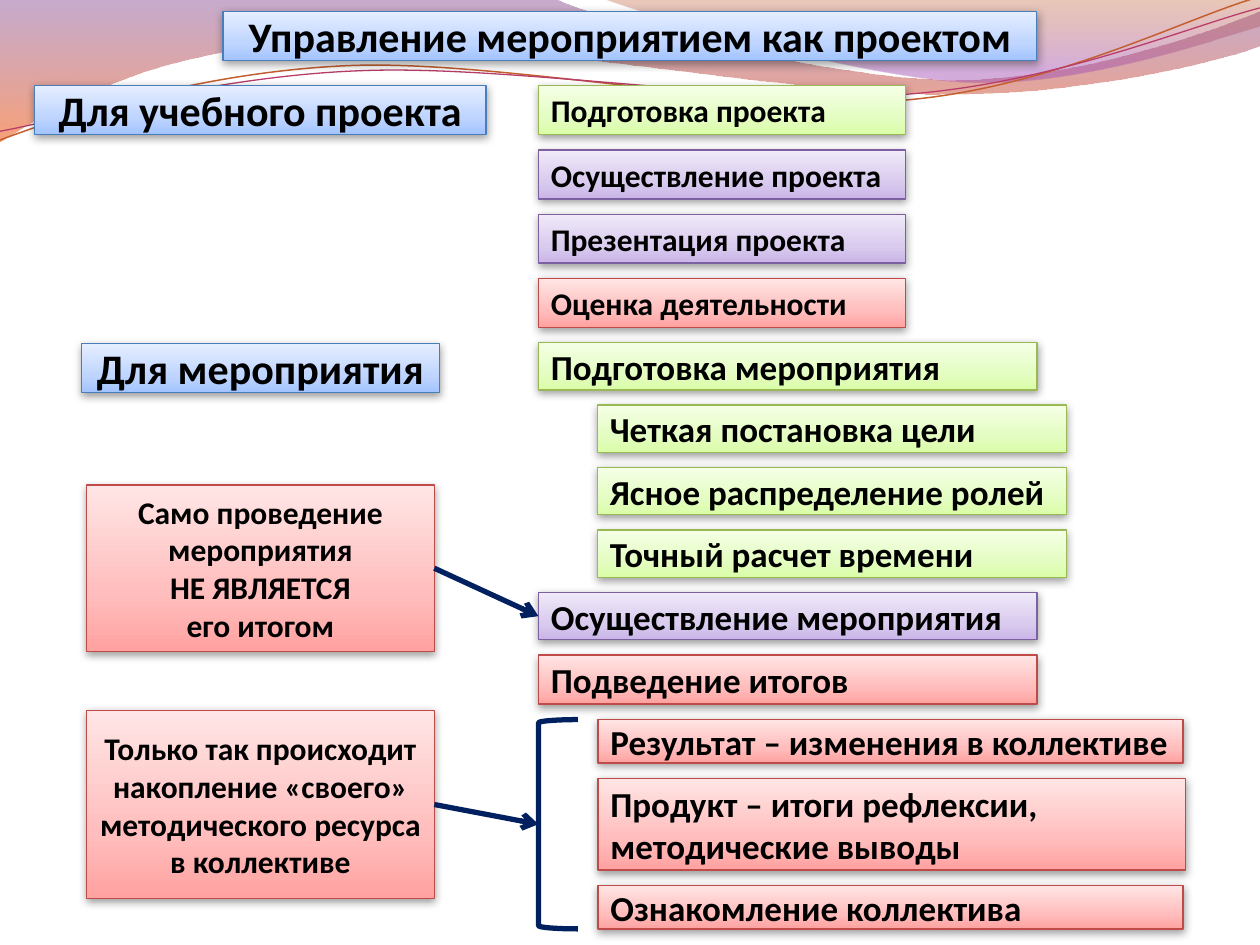
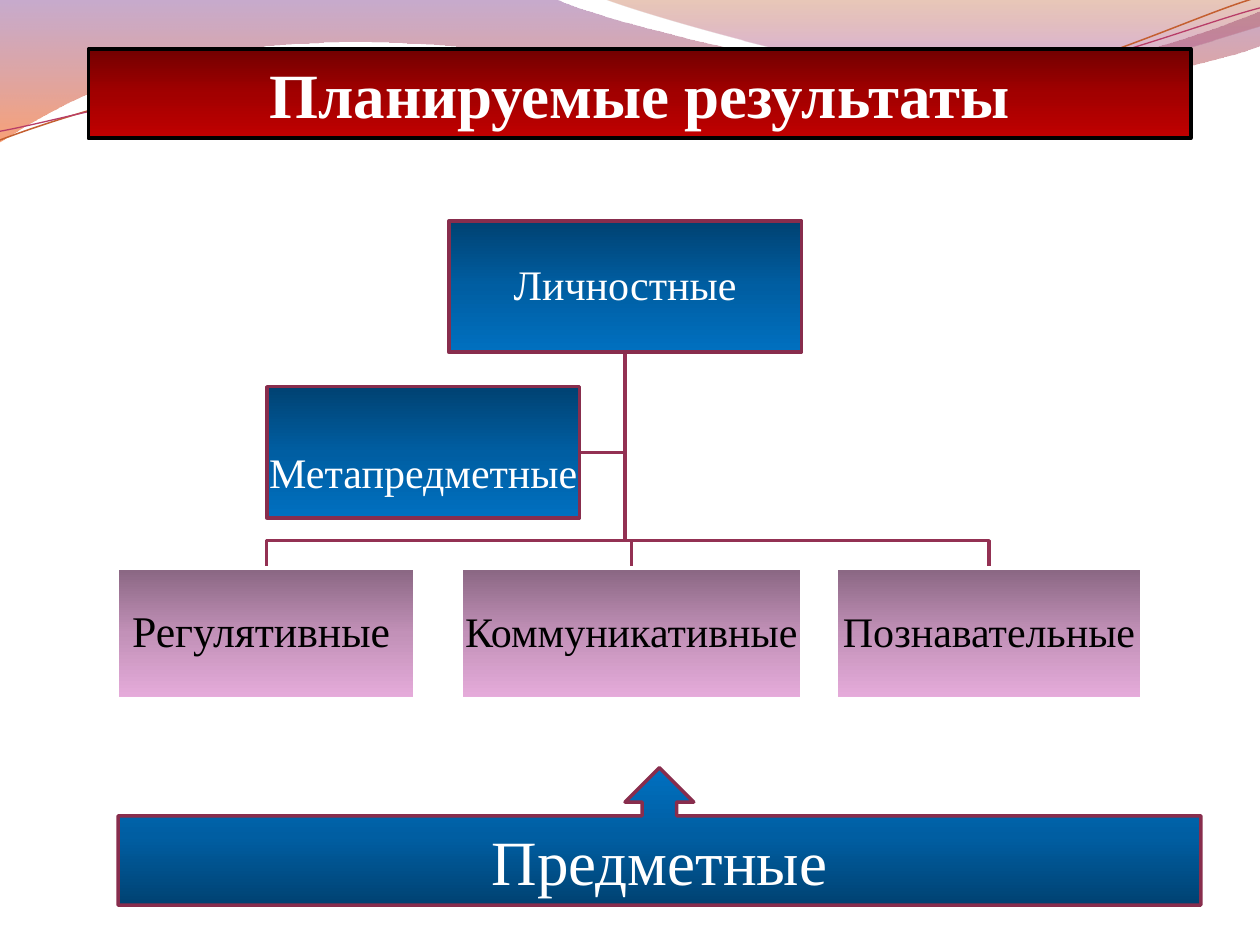
from dataclasses import dataclass
from typing import NamedTuple, Optional

from lxml.etree import SubElement
from pptx import Presentation
from pptx.dml.color import RGBColor
from pptx.enum.shapes import MSO_CONNECTOR, MSO_SHAPE
from pptx.enum.text import MSO_ANCHOR, PP_ALIGN
from pptx.oxml.ns import qn
from pptx.util import Pt


class Stop(NamedTuple):
    position: int
    color: str
    opacity: int = 100


class Paint(NamedTuple):
    stops: tuple[Stop, ...]
    angle: int  # clockwise degrees; 90 runs downwards
    line: Optional[str] = None
    line_width: float = 0.75
    shadow: bool = False


class Box(NamedTuple):
    left: float
    top: float
    width: float
    height: float

    @property
    def center(self) -> float:
        return self.left + self.width / 2

    @property
    def bottom(self) -> float:
        return self.top + self.height


def soft(dark: str, middle: str, light: str, line: str) -> Paint:
    return Paint((Stop(0, dark), Stop(35, middle), Stop(100, light)), 270, line, shadow=True)


def deep(dark: str, middle: str, light: str, line: str, angle: int = 90) -> Paint:
    return Paint((Stop(0, dark), Stop(50, middle), Stop(100, light)), angle, line, 2)


NAVY_STEPS = ("004272", "005EA2", "0070C0", "882D4D")


@dataclass(frozen=True)
class Theme:
    sans: str = "Calibri"
    serif: str = "Times New Roman"
    dark: str = "000000"
    light: str = "FFFFFF"
    arrow: str = "002060"
    branch: str = "933153"
    size_banner: float = 36
    size_heading: float = 24
    size_item: float = 20
    size_note: float = 18
    blue: Paint = soft("A3C4FF", "BFD5FF", "E5EEFF", "4A7EBB")
    green: Paint = soft("DAFDA7", "E4FDC2", "F5FFE6", "98B954")
    purple: Paint = soft("C9B5E8", "D9CBEE", "F0EAF9", "7D60A0")
    red: Paint = soft("FFA2A1", "FFBEBD", "FFE5E5", "BE4B48")
    crimson: Paint = deep("720000", "A20000", "C00000", "000000")
    navy: Paint = deep(*NAVY_STEPS)
    navy_up: Paint = deep(*NAVY_STEPS, angle=270)
    mauve: Paint = deep("896682", "C291B8", "E6ACDB", "FFFFFF")


THEME = Theme()


# Wave segments: two numbers are a straight line's end, six a cubic curve
class Wave(NamedTuple):
    start: tuple[float, float]
    segments: tuple[tuple[float, ...], ...]
    paint: Paint


WAVES = (
    Wave((0, 0),
         ((317, -0.7), (343, 12, 478, 45.5, 546, 45.5), (614.5, 45.5, 690, 18.5, 720, 6.5),
          (720.7, 26), (708, 31.5, 626.5, 54.5, 537, 54), (448, 54, 275, 20, 185, 24.5),
          (93, 26, 33, 60, -0.7, 81.5)),
         Paint((Stop(0, "834591", 45), Stop(100, "F35307", 55)), 90)),
    Wave((345, -0.7),
         ((366.5, 8, 491, 44.5, 553.5, 47), (616.5, 49.5, 692, 23, 720, 15), (720, 0)),
         Paint((Stop(0, "B74915", 30), Stop(80, "A14BB4", 45)), 90)),
    Wave((0, 80),
         ((34.5, 67, 114, 41, 199.5, 37.5), (284.5, 34, 427, 64, 513.5, 57.5),
          (600, 51, 675.5, 11, 718.5, -1.5)),
         Paint((), 0, "C45F30", 0.85)),
    Wave((0, 75),
         ((34, 69, 118, 44, 204, 40.5), (290, 36.5, 430, 60.5, 516, 54),
          (602, 48, 679.5, 15, 720, 4.5)),
         Paint((), 0, "B83D68", 0.75)),
)


# Drawing helpers
def apply_paint(shape, paint: Paint) -> None:
    properties = shape.element.spPr
    if paint.stops:
        shape.fill.gradient()
        shape.fill.gradient_angle = 360 - paint.angle
        stop_list = properties.find(qn("a:gradFill")).find(qn("a:gsLst"))
        stop_list.clear()
        for stop in paint.stops:
            entry = SubElement(stop_list, qn("a:gs"), pos=str(stop.position * 1000))
            color = SubElement(entry, qn("a:srgbClr"), val=stop.color)
            if stop.opacity < 100:
                SubElement(color, qn("a:alpha"), val=str(stop.opacity * 1000))
    else:
        shape.fill.background()
    if paint.line:
        shape.line.color.rgb = RGBColor.from_string(paint.line)
        shape.line.width = Pt(paint.line_width)
    else:
        shape.line.fill.background()
    shape.shadow.inherit = False
    if paint.shadow:
        shadow = SubElement(properties.find(qn("a:effectLst")), qn("a:outerShdw"),
                            blurRad=str(Pt(5)), dist=str(Pt(1.6)), dir="5400000",
                            rotWithShape="0")
        black = SubElement(shadow, qn("a:srgbClr"), val=THEME.dark)
        SubElement(black, qn("a:alpha"), val="38000")


def write(shape, text: str, *, size: float, font: str = THEME.sans, color: str = THEME.dark,
          bold: bool = False, align=PP_ALIGN.CENTER, anchor=MSO_ANCHOR.MIDDLE,
          wrap: bool = True, spacing: float = 1.0,
          margins: tuple[float, float, float, float] = (7.2, 3.6, 7.2, 3.6)) -> None:
    frame = shape.text_frame
    frame.word_wrap = wrap
    frame.vertical_anchor = anchor
    frame.margin_left, frame.margin_top, frame.margin_right, frame.margin_bottom = map(Pt, margins)
    paragraph = frame.paragraphs[0]
    paragraph.alignment = align
    paragraph.line_spacing = spacing
    for index, line in enumerate(text.split("\n")):
        if index:
            paragraph.add_line_break()
        run = paragraph.add_run()
        run.text = line
        run.font.size = Pt(size)
        run.font.name = font
        run.font.bold = bold
        run.font.color.rgb = RGBColor.from_string(color)


def draw_shape(slide, box: Box, paint: Paint, kind=MSO_SHAPE.RECTANGLE):
    shape = slide.shapes.add_shape(kind, *map(Pt, box))
    apply_paint(shape, paint)
    return shape


def draw_outline(slide, points: list[tuple[float, float]], paint: Paint):
    (start_x, start_y), *rest = points
    builder = slide.shapes.build_freeform(Pt(start_x), Pt(start_y), scale=1.0)
    builder.add_line_segments([(Pt(x), Pt(y)) for x, y in rest], close=bool(paint.stops))
    outline = builder.convert_to_shape()
    apply_paint(outline, paint)
    return outline


def draw_wave(slide, wave: Wave) -> None:
    points = [wave.start]
    for segment in wave.segments:
        points += zip(segment[::2], segment[1::2])
    outline = draw_outline(slide, points, wave.paint)

    # Join each curve's three points into one cubic segment
    steps = iter(list(outline.element.spPr.iter(qn("a:lnTo"))))
    for segment in wave.segments:
        first = next(steps)
        if len(segment) == 6:
            curve = first.makeelement(qn("a:cubicBezTo"))
            first.addprevious(curve)
            for step in (first, next(steps), next(steps)):
                curve.append(step[0])
                step.getparent().remove(step)


def draw_arrow(slide, source, target) -> None:
    arrow = slide.shapes.add_connector(MSO_CONNECTOR.STRAIGHT, 0, 0, 0, 0)
    arrow.begin_connect(source, 3)
    arrow.end_connect(target, 1)
    arrow.line.color.rgb = RGBColor.from_string(THEME.arrow)
    arrow.line.width = Pt(3)
    properties = arrow.element.spPr
    SubElement(properties.find(qn("a:ln")), qn("a:tailEnd"), type="arrow")
    SubElement(properties, qn("a:effectLst"))


def new_slide(deck):
    slide = deck.slides.add_slide(deck.slide_layouts[6])
    for wave in WAVES:
        draw_wave(slide, wave)
    return slide


# Slide 1: an event run as a project
class Step(NamedTuple):
    text: str
    paint: Paint
    left: float
    width: float
    height: float
    size: float = THEME.size_item


STAGE_LEFT, DETAIL_LEFT = 307.7, 341.7
PROJECT_SHAPE = (STAGE_LEFT, 209.7, 28, THEME.size_note)
STAGE_SHAPE = (STAGE_LEFT, 285, 27)
DETAIL_SHAPE = (DETAIL_LEFT - 0.3, 268, 27)
RESULT_SHAPE = (DETAIL_LEFT, 334.3, 25)
STEPS_TOP, STEPS_GAP = 49, 8.7
EXECUTION = "Осуществление мероприятия"

STEPS = (
    Step("Подготовка проекта", THEME.green, *PROJECT_SHAPE),
    Step("Осуществление проекта", THEME.purple, *PROJECT_SHAPE),
    Step("Презентация проекта", THEME.purple, *PROJECT_SHAPE),
    Step("Оценка деятельности", THEME.red, *PROJECT_SHAPE),
    Step("Подготовка мероприятия", THEME.green, *STAGE_SHAPE),
    Step("Четкая постановка цели", THEME.green, *DETAIL_SHAPE),
    Step("Ясное распределение ролей", THEME.green, *DETAIL_SHAPE),
    Step("Точный расчет времени", THEME.green, *DETAIL_SHAPE),
    Step(EXECUTION, THEME.purple, *STAGE_SHAPE),
    Step("Подведение итогов", THEME.red, STAGE_LEFT, 285, 28),
    Step("Результат – изменения в коллективе", THEME.red, *RESULT_SHAPE),
    Step("Продукт – итоги рефлексии,\nметодические выводы", THEME.red, DETAIL_LEFT, 335.7, 52.5),
    Step("Ознакомление коллектива", THEME.red, *RESULT_SHAPE),
)
HEADINGS = (
    ("Управление мероприятием как проектом", Box(127.5, 6.5, 465, 28)),
    ("Для учебного проекта", Box(19.7, 48.8, 258, 28)),
    ("Для мероприятия", Box(46.6, 196.4, 204.5, 28)),
)
NOT_RESULT = ("Само проведение мероприятия\nНЕ ЯВЛЯЕТСЯ\nего итогом", Box(49.5, 277.2, 198.7, 95))
RESOURCE = ("Только так происходит накопление «своего» методического ресурса\nв коллективе",
            Box(49.5, 406, 198.7, 107.5))


def build_event_slide(deck) -> None:
    slide = new_slide(deck)
    for text, box in HEADINGS:
        write(draw_shape(slide, box, THEME.blue), text, size=THEME.size_heading, bold=True)

    # Column of steps, stacked with an equal gap
    drawn = {}
    top = STEPS_TOP
    for step in STEPS:
        drawn[step.text] = draw_shape(slide, Box(step.left, top, step.width, step.height), step.paint)
        write(drawn[step.text], step.text, size=step.size, bold=True, align=PP_ALIGN.LEFT)
        top += step.height + STEPS_GAP

    # Notes and what they point to
    results = draw_shape(slide, Box(STAGE_LEFT, 411.2, 22.5, 119.6),
                         Paint((), 0, THEME.arrow, 3), MSO_SHAPE.LEFT_BRACKET)
    for (text, box), target in ((NOT_RESULT, drawn[EXECUTION]), (RESOURCE, results)):
        note = draw_shape(slide, box, THEME.red)
        write(note, text, size=THEME.size_note, bold=True)
        draw_arrow(slide, note, target)


# Slide 2: planned results
class Outcome(NamedTuple):
    text: str
    box: Box
    size: float = THEME.size_heading
    inset_top: float = 1.5
    inset_right: float = 1.5


PERSONAL = Outcome("Личностные", Box(256.5, 126.3, 201.5, 75))
META = Outcome("Метапредметные", Box(152.6, 221, 178.7, 75), inset_top=26.8)
SKILLS = (
    Outcome("Регулятивные", Box(67.2, 324.6, 170, 75), size=25, inset_right=7.5),
    Outcome("Коммуникативные", Box(263.5, 324.6, 194.5, 75)),
    Outcome("Познавательные", Box(478.1, 324.6, 174.2, 75)),
)
BRANCH_Y = 309


def draw_outcome(slide, outcome: Outcome, paint: Paint, color: str) -> None:
    write(draw_shape(slide, outcome.box, paint), outcome.text, size=outcome.size,
          font=THEME.serif, color=color, wrap=False, spacing=0.9,
          margins=(1.5, outcome.inset_top, outcome.inset_right, 1.5))


def build_results_slide(deck) -> None:
    slide = new_slide(deck)
    banner = draw_shape(slide, Box(50.5, 28, 630, 51), THEME.crimson)
    write(banner, "Планируемые результаты", size=THEME.size_banner, font=THEME.serif,
          color=THEME.light, bold=True, anchor=MSO_ANCHOR.TOP)

    # Branches of the tree
    trunk_x, trunk_top = PERSONAL.box.center, PERSONAL.box.bottom
    meta_y = META.box.top + META.box.height / 2
    routes = [[(trunk_x, meta_y), (META.box.left + META.box.width, meta_y)]]
    routes += [[(trunk_x, BRANCH_Y), (skill.box.center, BRANCH_Y),
                (skill.box.center, skill.box.top)] for skill in SKILLS]
    for route in routes:
        draw_outline(slide, [(trunk_x, trunk_top), *route], Paint((), 0, THEME.branch, 2))

    # Boxes of the tree
    for outcome in (PERSONAL, META):
        draw_outcome(slide, outcome, THEME.navy, THEME.light)
    for skill in SKILLS:
        draw_outcome(slide, skill, THEME.mauve, THEME.dark)

    subject = draw_shape(slide, Box(67.5, 438.7, 618.7, 78.5), THEME.navy_up,
                         MSO_SHAPE.UP_ARROW_CALLOUT)
    write(subject, "Предметные", size=THEME.size_banner, font=THEME.serif, color=THEME.light)


def main() -> None:
    deck = Presentation()
    deck.slide_width, deck.slide_height = Pt(720), Pt(540)
    build_event_slide(deck)
    build_results_slide(deck)
    deck.save("out.pptx")


if __name__ == "__main__":
    main()
